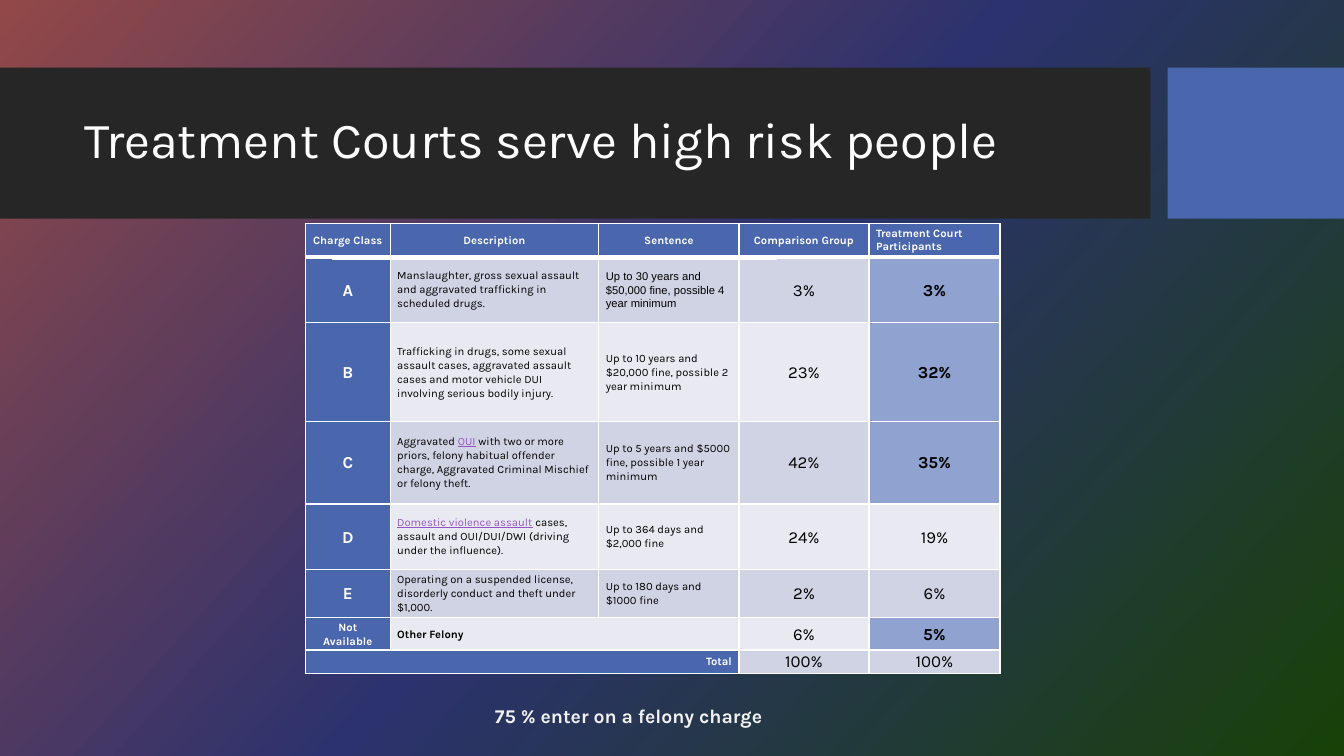
from lxml import etree
from pptx import Presentation
from pptx.dml.color import RGBColor
from pptx.enum.shapes import MSO_SHAPE
from pptx.enum.text import MSO_ANCHOR, PP_ALIGN
from pptx.oxml import parse_xml
from pptx.oxml.ns import nsdecls, qn
from pptx.util import Inches, Pt

RECT = MSO_SHAPE.RECTANGLE
MIDDLE = MSO_ANCHOR.MIDDLE
LEFT, CENTER, RIGHT, JUSTIFY = PP_ALIGN.LEFT, PP_ALIGN.CENTER, PP_ALIGN.RIGHT, PP_ALIGN.JUSTIFY

COLORS = {
    "red": "924848", "navy": "2C326E", "green": "184108",
    "band": "262626", "blue": "4A66AC", "highlight": "90A2CF",
    "row_dark": "D0D3E3", "row_light": "E9EAF1",
    "white": "FFFFFF", "black": "000000", "link": "9454C3", "caption": "F2F2F2",
}

COL_WIDTHS = [0.84, 2.07, 1.39, 1.29, 1.3]
ROW_HEIGHTS = [0.33, 0.65, 0.98, 0.82, 0.65, 0.48, 0.32, 0.23]
HEADERS = ["Charge Class", "Description", "Sentence", "Comparison Group",
           "Treatment Court Participants"]
# class, description as (text, style) runs, sentence, comparison group, participants
CHARGES = [
    ("A", [("Manslaughter, gross sexual assault and aggravated trafficking in scheduled drugs.", {})],
     "Up to 30 years and $50,000 fine, possible 4 year minimum", "3%", "3%"),
    ("B", [("Trafficking in drugs, some sexual assault cases, aggravated assault cases and "
            "motor vehicle DUI involving serious bodily injury.", {})],
     "Up to 10 years and $20,000 fine, possible 2 year minimum", "23%", "32%"),
    ("C", [("Aggravated ", {}), ("OUI", {"color": "link", "underline": True}),
           (" with two or more priors, felony habitual offender charge, "
            "Aggravated Criminal Mischief or felony theft.", {})],
     "Up to 5 years and $5000 fine, possible 1 year minimum", "42%", "35%"),
    ("D", [("Domestic violence assault", {"color": "link", "underline": True}),
           (" cases, assault and OUI/DUI/DWI (driving under the influence).", {})],
     "Up to 364 days and $2,000 fine", "24%", "19%"),
    ("E", [("Operating on a suspended license, disorderly conduct and theft under $1,000.", {})],
     "Up to 180 days and $1000 fine", "2%", "6%"),
    ("Not Available", [("Other Felony", {"bold": True})], None, "6%", "5%"),
]
HIGHLIGHTED = {"A", "B", "C", "Not Available"}


def rgb(name):
    return RGBColor.from_string(COLORS[name])


class Deck:
    font = "Karla"

    def __init__(self, prs):
        self.slide = prs.slides.add_slide(prs.slide_layouts[6])

    def background(self, stops, angle):
        """Fill the slide with a gradient of (percent, colour) stops."""
        self.slide.background.fill.solid()
        bg_pr = self.slide.background.fill._xPr
        bg_pr.remove(bg_pr.find(qn("a:solidFill")))
        gs = "".join(f'<a:gs pos="{pos * 1000}"><a:srgbClr val="{COLORS[color]}"/></a:gs>'
                     for pos, color in stops)
        bg_pr.insert(0, parse_xml(
            f'<a:gradFill {nsdecls("a")} rotWithShape="1"><a:gsLst>{gs}</a:gsLst>'
            f'<a:lin ang="{angle * 60000}" scaled="0"/></a:gradFill>'))

    def rect(self, x, y, w, h, fill, line=None):
        sp = self.slide.shapes.add_shape(RECT, Inches(x), Inches(y), Inches(w), Inches(h))
        sp.shadow.inherit = False
        sp.fill.solid()
        sp.fill.fore_color.rgb = rgb(fill)
        if line:
            sp.line.color.rgb = rgb(line)
            sp.line.width = Pt(0.75)
        else:
            sp.line.fill.background()

    def run(self, p, text, size, color, bold=False, font=None, underline=False):
        r = p.add_run()
        r.text = text
        r.font.name = font or self.font
        r.font.size = Pt(size)
        r.font.bold = bold
        r.font.underline = underline
        r.font.color.rgb = rgb(color)
        return r

    def text(self, x, y, w, h, text, size, color, align=LEFT, spacing=None, bold=False):
        tb = self.slide.shapes.add_textbox(Inches(x), Inches(y), Inches(w), Inches(h))
        tf = tb.text_frame
        tf.word_wrap = True
        tf.vertical_anchor = MIDDLE
        p = tf.paragraphs[0]
        p.alignment = align
        p.line_spacing = spacing
        return self.run(p, text, size, color, bold)

    def table(self, x, y, col_widths, row_heights):
        frame = self.slide.shapes.add_table(
            len(row_heights), len(col_widths), Inches(x), Inches(y),
            Inches(sum(col_widths)), Inches(sum(row_heights)))
        table = frame.table
        table.first_row = table.horz_banding = False
        for col, width in zip(table.columns, col_widths):
            col.width = Inches(width)
        for row, height in zip(table.rows, row_heights):
            row.height = Inches(height)
        return table

    def borders(self, cell, top=1, bottom=1):
        tc_pr = cell._tc.get_or_add_tcPr()
        for i, (side, width) in enumerate((("L", 1), ("R", 1), ("T", top), ("B", bottom))):
            ln = etree.Element(qn(f"a:ln{side}"), w=str(Pt(width)))
            fill = etree.SubElement(ln, qn("a:solidFill"))
            etree.SubElement(fill, qn("a:srgbClr"), val=COLORS["white"])
            tc_pr.insert(i, ln)

    def cell(self, cell, runs, fill, size=8, color="black", align=LEFT, spacing=1.07, **style):
        """Fill a cell with (text, style) runs; a run's style overrides the cell's."""
        cell.fill.solid()
        cell.fill.fore_color.rgb = rgb(fill)
        cell.vertical_anchor = MIDDLE
        cell.margin_left = cell.margin_right = Inches(0.07)
        cell.margin_top = cell.margin_bottom = 0
        p = cell.text_frame.paragraphs[0]
        p.alignment = align
        p.line_spacing = spacing
        for text, own in runs:
            self.run(p, text, **{"size": size, "color": color, **style, **own})


def fill_charge_table(deck, table):
    last = len(ROW_HEIGHTS) - 1
    table.cell(last - 1, 1).merge(table.cell(last - 1, 2))
    table.cell(last, 0).merge(table.cell(last, 2))
    for i in range(last + 1):
        for j in range(len(COL_WIDTHS)):
            deck.borders(table.cell(i, j), top=3 if i == 1 else 1, bottom=3 if i == 0 else 1)

    label = {"fill": "blue", "color": "white", "bold": True}
    for j, header in enumerate(HEADERS):
        wraps = j == len(HEADERS) - 1
        deck.cell(table.cell(0, j), [(header, {})], align=LEFT if wraps else CENTER,
                  spacing=None if wraps else 1.07, **label)

    for i, (name, description, sentence, comparison, participants) in enumerate(CHARGES, 1):
        band = "row_dark" if i % 2 else "row_light"
        marked = name in HIGHLIGHTED
        deck.cell(table.cell(i, 0), [(name, {})], size=12 if len(name) == 1 else 8,
                  align=CENTER, **label)
        deck.cell(table.cell(i, 1), description, band)
        if sentence:
            deck.cell(table.cell(i, 2), [(sentence, {})], band,
                      font="Arial" if name == "A" else None)
        deck.cell(table.cell(i, 3), [(comparison, {})], band, size=12, align=CENTER)
        deck.cell(table.cell(i, 4), [(participants, {})], "highlight" if marked else band,
                  size=12, align=CENTER, bold=marked)

    deck.cell(table.cell(last, 0), [("Total", {})], align=RIGHT, **label)
    for j in (3, 4):
        deck.cell(table.cell(last, j), [("100%", {})], "row_dark", size=12, align=CENTER)


def main():
    prs = Presentation()
    prs.slide_width, prs.slide_height = Inches(13.33), Inches(7.5)
    deck = Deck(prs)
    deck.background([(0, "red"), (50, "navy"), (100, "green")], 42)
    deck.rect(0, 0.67, 11.41, 1.5, "band")
    deck.rect(11.58, 0.67, 1.75, 1.5, "blue")
    deck.text(0.74, 0.82, 10.51, 1.18, "Treatment Courts serve high risk people",
              36, "white", spacing=0.9)
    fill_charge_table(deck, deck.table(3.03, 2.22, COL_WIDTHS, ROW_HEIGHTS))
    deck.rect(3.3, 2.56, 4.4, 0.01, "black", line="white")
    caption = deck.text(4.81, 6.89, 7.18, 0.5, "75 % enter on a felony charge",
                        24, "caption", align=JUSTIFY, bold=True)
    caption.font._element.set("baseline", "30000")
    prs.save("out.pptx")


if __name__ == "__main__":
    main()
